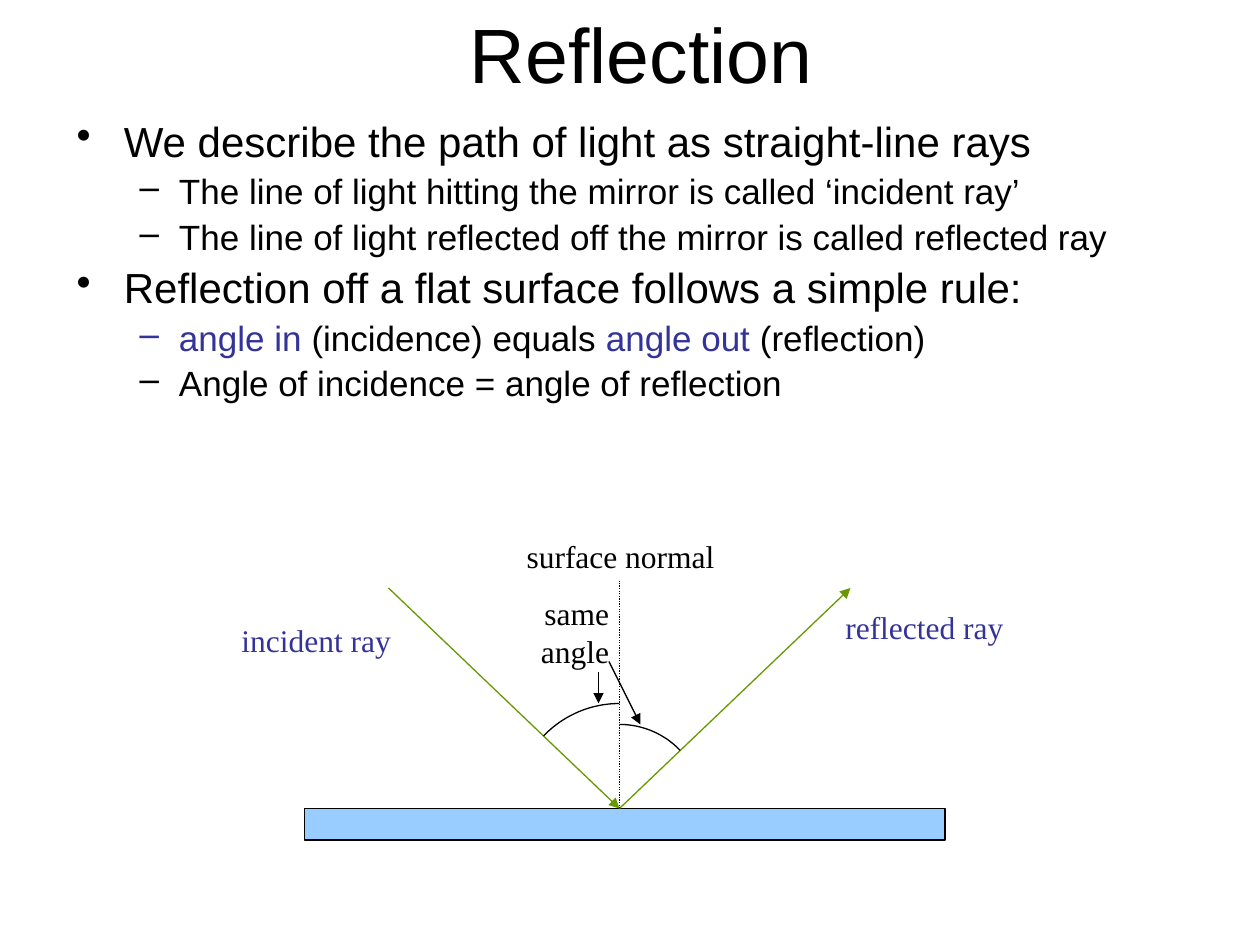
import math
import pptx
import pptx.util
import pptx.dml.color
import pptx.enum.dml
import pptx.enum.shapes
import pptx.enum.text
import pptx.oxml
import pptx.oxml.ns

Pt = pptx.util.Pt
RGBColor = pptx.dml.color.RGBColor
Align = pptx.enum.text.PP_ALIGN
Anchor = pptx.enum.text.MSO_ANCHOR
Dash = pptx.enum.dml.MSO_LINE

BLACK = RGBColor(0x00, 0x00, 0x00)
INDIGO = RGBColor(0x33, 0x33, 0x99)
GREEN = RGBColor(0x66, 0x99, 0x00)
SKY = RGBColor(0x99, 0xCC, 0xFF)

TITLE = "Reflection"
BULLETS = [
    (0, [("We describe the path of light as straight-line rays", BLACK)]),
    (1, [("The line of light hitting the mirror is called ‘incident ray’", BLACK)]),
    (1, [("The line of light reflected off the mirror is called reflected ray", BLACK)]),
    (0, [("Reflection off a flat surface follows a simple rule:", BLACK)]),
    (1, [("angle in", INDIGO), (" (incidence) equals ", BLACK),
         ("angle out ", INDIGO), ("(reflection)", BLACK)]),
    (1, [("Angle of incidence = angle of reflection", BLACK)]),
]
LEVELS = [("•", 24, 27, -27), ("–", 20, 58.5, -22.5)]

APEX = (354, 462)
RAY_RUN, RAY_RISE = 132, 126
RAY_TOP = APEX[1] - RAY_RISE
INCIDENT_START = (APEX[0] - RAY_RUN, RAY_TOP)
REFLECTED_END = (APEX[0] + RAY_RUN, RAY_TOP)
MIRROR = (174, APEX[1], 366, 18)
LINES = [
    (INCIDENT_START, APEX, GREEN, True, None),
    (APEX, REFLECTED_END, GREEN, True, None),
    (APEX, (APEX[0], 332), BLACK, False, Dash.ROUND_DOT),
    ((348, 378), (366, 414), BLACK, True, None),
    ((342, 384), (342, 402), BLACK, True, None),
]
ARCS = [(48, 1), (60, -1)]
ARC_STEPS = 24
LABELS = [
    (["surface normal"], (293.8, 303.1, 121.7, 28.8), BLACK, Align.LEFT),
    (["same", "angle"], (301.9, 336, 53.3, 50.4), BLACK, Align.RIGHT),
    (["incident ray"], (130.9, 351.3, 100.1, 28.8), INDIGO, Align.LEFT),
    (["reflected ray"], (476, 343.7, 105.1, 28.8), INDIGO, Align.LEFT),
]


def add_run(paragraph, text, size, color, font="Arial"):
    run = paragraph.add_run()
    run.text = text
    run.font.name = font
    run.font.size = Pt(size)
    run.font.color.rgb = color


def add_text_frame(slide, box, wrap):
    frame = slide.shapes.add_textbox(*map(Pt, box)).text_frame
    frame.word_wrap = wrap
    return frame


def paragraph_at(frame, index):
    return frame.add_paragraph() if index else frame.paragraphs[0]


def add_title(slide):
    frame = add_text_frame(slide, (42.5, 0, 648, 60), True)
    frame.vertical_anchor = Anchor.MIDDLE
    paragraph = frame.paragraphs[0]
    paragraph.alignment = Align.CENTER
    add_run(paragraph, TITLE, 44, BLACK)


def add_bullets(slide):
    frame = add_text_frame(slide, (36.7, 65.5, 648, 217.5), True)
    for index, (level, runs) in enumerate(BULLETS):
        mark, size, margin, indent = LEVELS[level]
        paragraph = paragraph_at(frame, index)
        paragraph.level = level
        paragraph.line_spacing = 0.9
        paragraph.space_before = Pt(round(size * 0.23, 1))
        properties = paragraph._p.get_or_add_pPr()
        properties.set("marL", str(Pt(margin)))
        properties.set("indent", str(Pt(indent)))
        bullet = pptx.oxml.ns.qn("a:buChar")
        properties.append(properties.makeelement(bullet, {"char": mark}))
        for text, color in runs:
            add_run(paragraph, text, size, color)


def add_mirror(slide):
    rectangle = pptx.enum.shapes.MSO_SHAPE.RECTANGLE
    mirror = slide.shapes.add_shape(rectangle, *map(Pt, MIRROR))
    mirror.shadow.inherit = False
    mirror.fill.solid()
    mirror.fill.fore_color.rgb = SKY
    mirror.line.color.rgb = BLACK
    mirror.line.width = Pt(0.75)


def add_line(slide, start, end, color, arrow, dash):
    straight = pptx.enum.shapes.MSO_CONNECTOR.STRAIGHT
    connector = slide.shapes.add_connector(straight, *map(Pt, start + end))
    connector.line.color.rgb = color
    connector.line.width = Pt(0.75)
    if dash:
        connector.line.dash_style = dash
    if arrow:
        outline = connector.line._get_or_add_ln()
        tail = pptx.oxml.ns.qn("a:tailEnd")
        outline.append(outline.makeelement(tail, {"type": "triangle"}))
    properties = connector._element.spPr
    properties.append(properties.makeelement(pptx.oxml.ns.qn("a:effectLst"), {}))


def add_arc(slide, radius, side):
    ray_angle = math.atan2(RAY_RUN, RAY_RISE)
    angles = [ray_angle * step / ARC_STEPS for step in range(ARC_STEPS + 1)]
    points = [(Pt(APEX[0] + side * radius * math.sin(angle)),
               Pt(APEX[1] - radius * math.cos(angle))) for angle in angles]
    builder = slide.shapes.build_freeform(*points[0])
    builder.add_line_segments(points[1:], close=False)
    arc = builder.convert_to_shape()
    arc.shadow.inherit = False
    arc.fill.background()
    arc.line.color.rgb = BLACK
    arc.line.width = Pt(0.75)


def add_label(slide, texts, box, color, alignment):
    frame = add_text_frame(slide, box, False)
    for index, text in enumerate(texts):
        paragraph = paragraph_at(frame, index)
        paragraph.alignment = alignment
        add_run(paragraph, text, 18, color, "Times New Roman")


def main():
    presentation = pptx.Presentation()
    presentation.slide_width = Pt(720)
    presentation.slide_height = Pt(540)
    slide = presentation.slides.add_slide(presentation.slide_layouts[6])
    add_title(slide)
    add_bullets(slide)
    add_mirror(slide)
    for line in LINES:
        add_line(slide, *line)
    for arc in ARCS:
        add_arc(slide, *arc)
    for label in LABELS:
        add_label(slide, *label)
    presentation.save("out.pptx")


if __name__ == "__main__":
    main()
